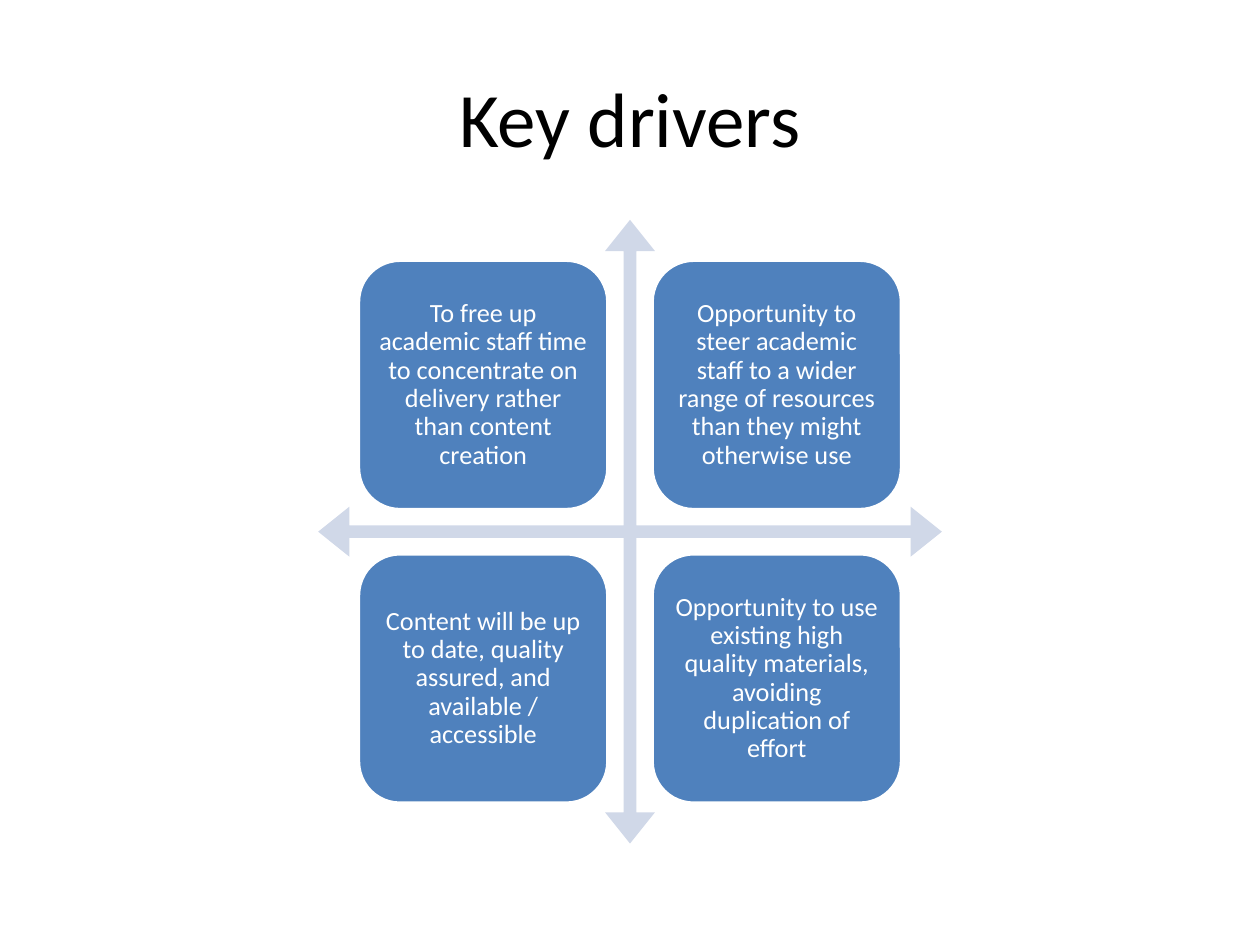
from pptx import Presentation
from pptx.dml.color import RGBColor
from pptx.enum.shapes import MSO_SHAPE as Shape
from pptx.enum.text import MSO_ANCHOR as Anchor, PP_ALIGN as Align
from pptx.util import Inches, Pt

TITLE = "Key drivers"
DRIVERS = [
    ["To free up academic staff time to concentrate on delivery rather than content creation",
     "Opportunity to steer academic staff to a wider range of resources than they might otherwise use"],
    ["Content will be up to date, quality assured, and available / accessible",
     "Opportunity to use existing high quality materials, avoiding duplication of effort"],
]

BLACK = RGBColor(0x00, 0x00, 0x00)
WHITE = RGBColor(0xFF, 0xFF, 0xFF)
BLUE = RGBColor(0x4F, 0x81, 0xBD)
PALE_BLUE = RGBColor(0xD0, 0xD8, 0xE8)

CENTER_X, CENTER_Y = 5, 4.22
ARROW_SIZE = 4.95
ARROW_ADJUSTMENTS = (0.02, 0.04, 0.05)
CARD_SIZE = 1.98
CARD_PITCH = 2.33


def write(shape, text, size, color, inset=0.1, line_spacing=1.0):
    frame = shape.text_frame
    frame.word_wrap = True
    frame.vertical_anchor = Anchor.MIDDLE
    frame.margin_left = frame.margin_right = Inches(inset)
    frame.margin_top = frame.margin_bottom = Inches(min(inset, 0.06))
    paragraph = frame.paragraphs[0]
    paragraph.text = text
    paragraph.alignment = Align.CENTER
    paragraph.line_spacing = line_spacing
    paragraph.font.name = "Calibri"
    paragraph.font.size = Pt(size)
    paragraph.font.color.rgb = color


def add_centered(slide, kind, x, y, size, fill):
    """Add a square-framed shape whose middle is at x, y."""
    shape = slide.shapes.add_shape(
        kind, Inches(x - size / 2), Inches(y - size / 2), Inches(size), Inches(size))
    shape.shadow.inherit = False
    shape.fill.solid()
    shape.fill.fore_color.rgb = fill
    shape.line.fill.background()
    return shape


def main():
    deck = Presentation()
    deck.slide_width, deck.slide_height = Inches(10), Inches(7.5)
    slide = deck.slides.add_slide(deck.slide_layouts[6])

    title = slide.shapes.add_textbox(Inches(0.5), Inches(0.3), Inches(9), Inches(1.25))
    write(title, TITLE, 44, BLACK)

    axes = add_centered(slide, Shape.QUAD_ARROW, CENTER_X, CENTER_Y, ARROW_SIZE, PALE_BLUE)
    for index, value in enumerate(ARROW_ADJUSTMENTS):
        axes.adjustments[index] = value

    for row, drivers in enumerate(DRIVERS):
        for column, driver in enumerate(drivers):
            card = add_centered(
                slide, Shape.ROUNDED_RECTANGLE,
                CENTER_X + (column - 0.5) * CARD_PITCH,
                CENTER_Y + (row - 0.5) * CARD_PITCH, CARD_SIZE, BLUE)
            card.line.color.rgb = WHITE
            card.line.width = Pt(2)
            write(card, driver, 15, WHITE, inset=0.06, line_spacing=0.9)

    deck.save("out.pptx")


if __name__ == "__main__":
    main()
